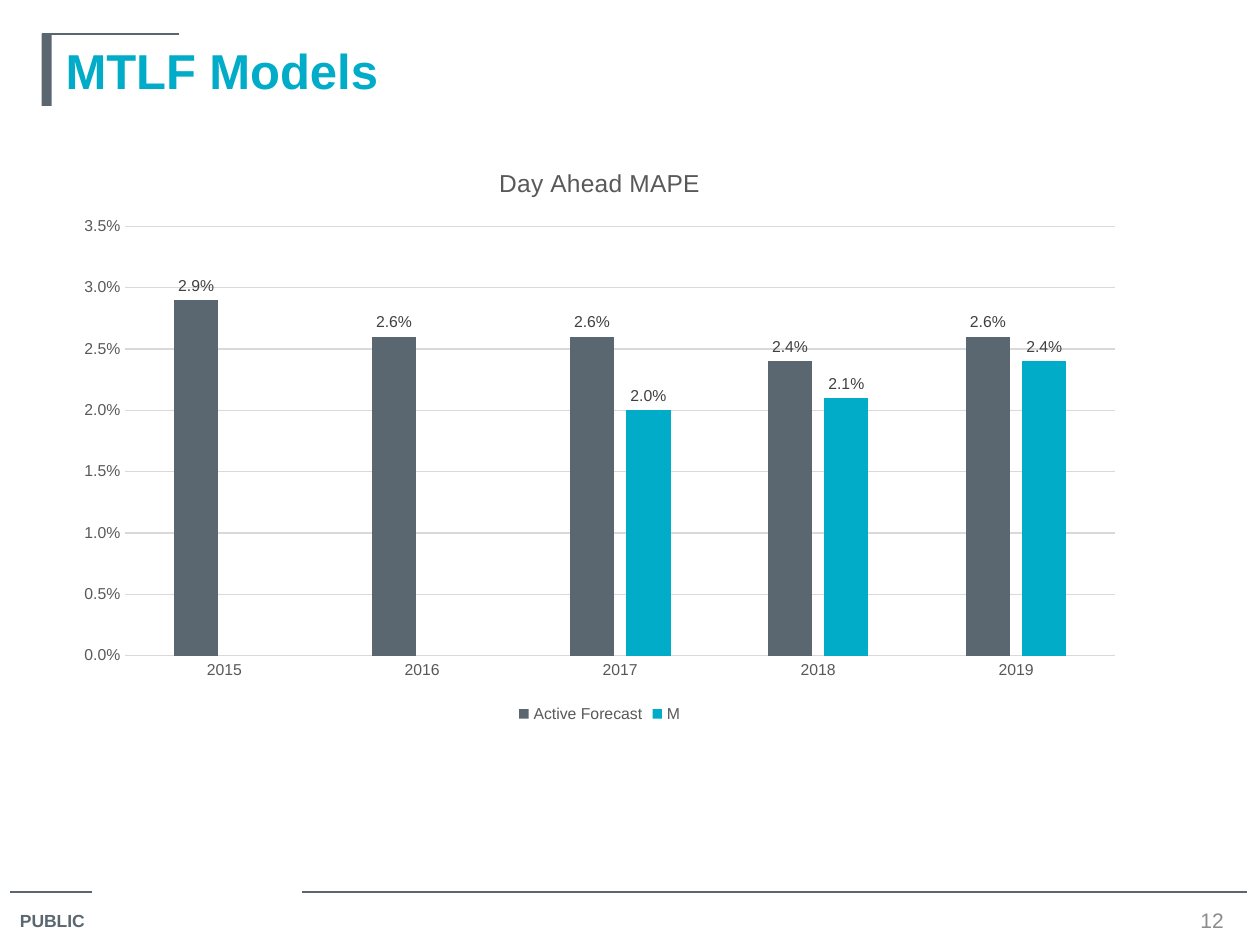
"""Builds the MTLF Models slide with its Day Ahead MAPE column chart."""
from dataclasses import dataclass

from lxml.etree import SubElement
from pptx import Presentation
from pptx.chart.data import CategoryChartData
from pptx.dml.color import RGBColor
from pptx.enum.chart import XL_CHART_TYPE, XL_LABEL_POSITION, XL_LEGEND_POSITION, XL_TICK_MARK
from pptx.enum.shapes import MSO_CONNECTOR, MSO_SHAPE
from pptx.enum.text import MSO_ANCHOR, PP_ALIGN
from pptx.oxml.ns import qn
from pptx.util import Inches, Pt


@dataclass(frozen=True)
class Theme:
    font: str = "Arial"
    slate: str = "5B6770"
    teal: str = "00ACC8"
    grid: str = "D9D9D9"
    axis_text: str = "595959"
    label_text: str = "404040"
    number_text: str = "8C8C8C"
    title_size: int = 28
    chart_title_size: int = 14
    number_size: int = 12
    footer_size: int = 10
    chart_size: int = 9
    line_width: float = 0.75


theme = Theme()
presentation = Presentation()
presentation.slide_width = Inches(10)
presentation.slide_height = Inches(7.5)


def place(left, top, width, height):
    """Turns percentages of the slide's width and height into lengths."""
    across, down = presentation.slide_width / 100, presentation.slide_height / 100
    return int(left * across), int(top * down), int(width * across), int(height * down)


def style(font, size, color, bold=False):
    """Gives a font the theme's typeface with a size, colour and weight."""
    font.name, font.size, font.bold = theme.font, Pt(size), bold
    font.color.rgb = RGBColor.from_string(color)


slide = presentation.slides.add_slide(presentation.slide_layouts[5])

header_top, header_height, footer_top = 3.6, 7.6, 94.4
for left, top, width in ((0.8, footer_top, 6.5), (24, footer_top, 75), (3.3, header_top, 10.9)):
    x, y, length, _ = place(left, top, width, 0)
    rule = slide.shapes.add_connector(MSO_CONNECTOR.STRAIGHT, x, y, x + length, y)
    rule.line.color.rgb = RGBColor.from_string(theme.slate)
    rule.line.width = Pt(theme.line_width)
    SubElement(rule._element.spPr, qn("a:effectLst"))

accent_bar = slide.shapes.add_shape(
    MSO_SHAPE.RECTANGLE, *place(3.3, header_top, 0.8, header_height))
accent_bar.shadow.inherit = False
accent_bar.fill.solid()
accent_bar.fill.fore_color.rgb = RGBColor.from_string(theme.slate)
accent_bar.line.fill.background()

title = slide.shapes.title
title.left, title.top, title.width, title.height = place(4.2, header_top, 92.5, header_height)
footer = slide.shapes.add_textbox(*place(0.6, 95.6, 7.7, 3.73))
slide_number = slide.shapes.add_textbox(*place(93.3, 95.73, 5.8, 3.2))
for shape, text, size, color, bold, alignment, anchor in (
    (title, "MTLF Models", theme.title_size, theme.teal, True, PP_ALIGN.LEFT, MSO_ANCHOR.MIDDLE),
    (footer, "PUBLIC", theme.footer_size, theme.slate, True, PP_ALIGN.LEFT, MSO_ANCHOR.TOP),
    (slide_number, "12", theme.number_size, theme.number_text, False,
     PP_ALIGN.CENTER, MSO_ANCHOR.MIDDLE),
):
    text_frame = shape.text_frame
    text_frame.text = text
    text_frame.word_wrap = True
    text_frame.vertical_anchor = anchor
    paragraph = text_frame.paragraphs[0]
    paragraph.alignment = alignment
    style(paragraph.runs[0].font, size, color, bold)

percent = "0.0%"
chart_data = CategoryChartData(number_format=percent)
chart_data.categories = ["2015", "2016", "2017", "2018", "2019"]
chart_data.add_series("Active Forecast", (0.029, 0.026, 0.026, 0.024, 0.026))
chart_data.add_series("M", (None, None, 0.02, 0.021, 0.024))
chart = slide.shapes.add_chart(
    XL_CHART_TYPE.COLUMN_CLUSTERED, *place(5, 15.33, 85.2, 61.73), chart_data).chart
style(chart.font, theme.chart_size, theme.axis_text)

chart.has_title = True
chart.chart_title.text_frame.text = "Day Ahead MAPE"
chart.chart_title.include_in_layout = False
style(chart.chart_title.text_frame.paragraphs[0].runs[0].font,
      theme.chart_title_size, theme.axis_text)
chart.has_legend = True
chart.legend.position = XL_LEGEND_POSITION.BOTTOM
chart.legend.include_in_layout = False
style(chart.legend.font, theme.chart_size, theme.axis_text)

category_axis, value_axis = chart.category_axis, chart.value_axis
for axis in (category_axis, value_axis):
    axis.major_tick_mark = axis.minor_tick_mark = XL_TICK_MARK.NONE
    style(axis.tick_labels.font, theme.chart_size, theme.axis_text)
value_axis.minimum_scale, value_axis.maximum_scale, value_axis.major_unit = 0, 0.035, 0.005
value_axis.tick_labels.number_format = percent
value_axis.tick_labels.number_format_is_linked = False
value_axis.format.line.fill.background()
for line in (category_axis.format.line, value_axis.major_gridlines.format.line):
    line.color.rgb = RGBColor.from_string(theme.grid)
    line.width = Pt(theme.line_width)

plot = chart.plots[0]
plot.gap_width, plot.overlap, plot.vary_by_categories = 219, -27, False
for series, color in zip(plot.series, (theme.slate, theme.teal)):
    series.format.fill.solid()
    series.format.fill.fore_color.rgb = RGBColor.from_string(color)
    labels = series.data_labels
    labels.show_value = True
    labels.position = XL_LABEL_POSITION.OUTSIDE_END
    labels.number_format = percent
    labels.number_format_is_linked = False
    style(labels.font, theme.chart_size, theme.label_text)

presentation.save("out.pptx")
